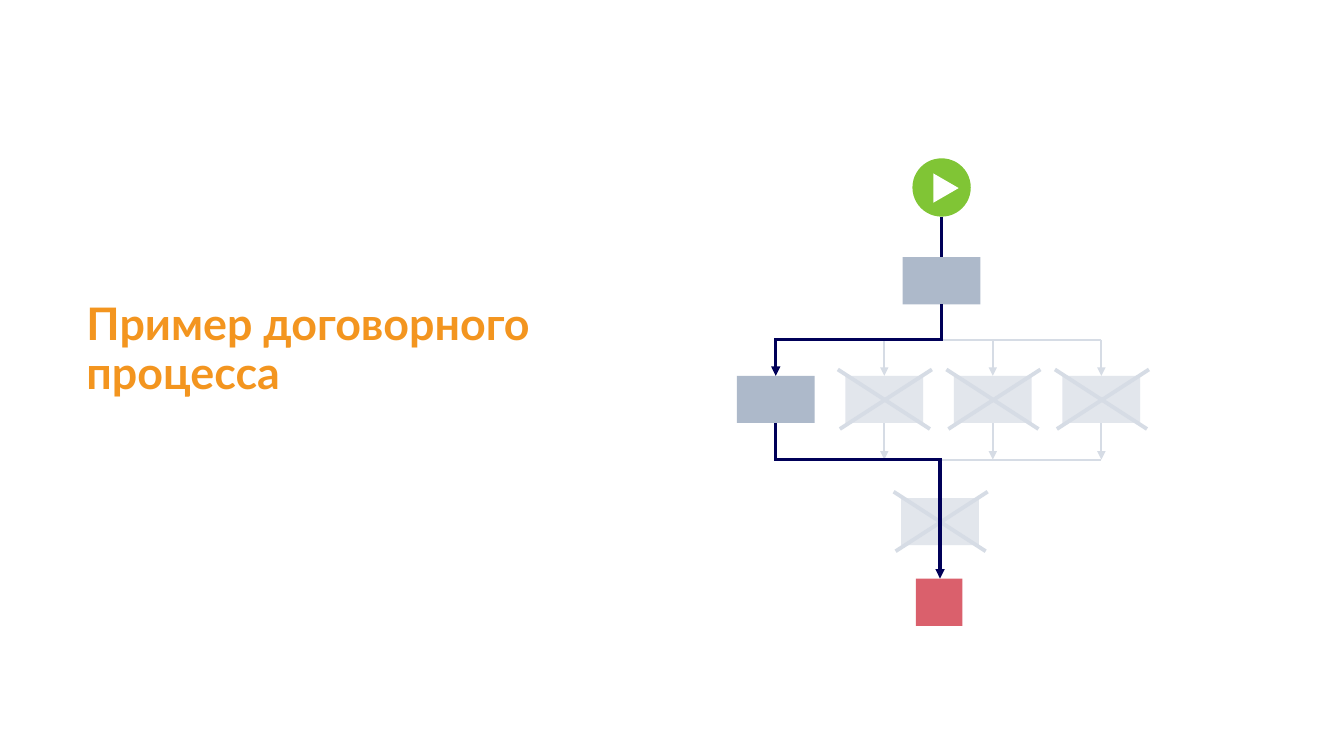
import pptx
import pptx.dml.color
import pptx.enum.shapes
import pptx.enum.text
import pptx.oxml
import pptx.oxml.ns
import pptx.util

Cm = pptx.util.Cm
Pt = pptx.util.Pt
SHAPE = pptx.enum.shapes.MSO_SHAPE

COLORS = {
    "title": "F3951F",
    "step": "ADB9CA",
    "faded": "D6DCE5",
    "route": "000058",
    "start": "80C535",
    "play": "FFFFFF",
    "stop": "DA606C",
}
STEP_W, STEP_H = 1.96, 1.19
AXIS = 23.73
BRANCHES = [19.55 + 2.735 * i for i in range(4)]
START_TOP, START_SIZE = 3.99, 1.47
FIRST_TOP = 6.48
SPLIT_Y, JOIN_Y = 8.56, 11.58
BRANCH_TOP = 9.47
SKIPPED_X, SKIPPED_TOP = 23.69, 12.55
STOP_TOP = 14.58


def rgb(color):
    return pptx.dml.color.RGBColor.from_string(COLORS[color])


def apply(target, values):
    for name, value in values.items():
        setattr(target, name, value)


def add_xml(parent, tag, **attributes):
    element = pptx.oxml.parse_xml(f"<a:{tag} {pptx.oxml.ns.nsdecls('a')}/>")
    for name, value in attributes.items():
        element.set(name, value)
    parent.append(element)


class ProcessSlide:
    """Holds the current slide, its diagram group and the text style."""

    font_format = {"name": "Lato", "size": Pt(32), "bold": True}
    frame_format = {
        "word_wrap": True,
        "vertical_anchor": pptx.enum.text.MSO_ANCHOR.MIDDLE,
    }

    def __init__(self, presentation):
        self.slide = presentation.slides.add_slide(presentation.slide_layouts[6])
        self.diagram = None

    def title(self, wording, left, top, width, height):
        box = self.slide.shapes.add_textbox(Cm(left), Cm(top), Cm(width), Cm(height))
        frame = box.text_frame
        apply(frame, self.frame_format)
        paragraph = frame.paragraphs[0]
        paragraph.text = wording
        paragraph.line_spacing = 0.9
        for run in paragraph.runs:
            apply(run.font, self.font_format)
            run.font.color.rgb = rgb("title")

    def start_diagram(self):
        self.diagram = self.slide.shapes.add_group_shape().shapes

    def node(self, kind, center, top, width, height, color, alpha=None, rotation=0):
        shape = self.diagram.add_shape(
            kind, Cm(center - width / 2), Cm(top), Cm(width), Cm(height))
        shape.shadow.inherit = False
        shape.rotation = rotation
        shape.fill.solid()
        shape.fill.fore_color.rgb = rgb(color)
        shape.line.fill.background()
        if alpha:
            tint = shape.fill._xPr.find(".//" + pptx.oxml.ns.qn("a:srgbClr"))
            add_xml(tint, "alpha", val=str(alpha * 1000))

    def step(self, center, top):
        self.node(SHAPE.RECTANGLE, center, top, STEP_W, STEP_H, "step")

    def skipped_step(self, center, top):
        self.node(SHAPE.RECTANGLE, center, top, STEP_W, STEP_H, "faded", alpha=70)

    def line(self, x1, y1, x2, y2, color, width, arrow=False):
        connector = self.diagram.add_connector(
            pptx.enum.shapes.MSO_CONNECTOR.STRAIGHT, Cm(x1), Cm(y1), Cm(x2), Cm(y2))
        connector.line.color.rgb = rgb(color)
        connector.line.width = Pt(width)
        if arrow:
            add_xml(connector.line._get_or_add_ln(), "tailEnd", type="triangle")
        add_xml(connector._element.spPr, "effectLst")

    def faded_line(self, *ends, arrow=False):
        self.line(*ends, "faded", 1.5, arrow)

    def route(self, *ends, arrow=False):
        self.line(*ends, "route", 2.25, arrow)

    def cross(self, center, top):
        """Strikes out the step with two diagonals that overshoot its corners."""
        left, upper = center - STEP_W / 2 - 0.19, top - 0.16
        right, lower = left + 2.32, upper + 1.5
        self.line(left, upper, right, lower, "faded", 2.75)
        self.line(left + 0.05, lower, right + 0.05, upper, "faded", 2.75)


def main():
    presentation = pptx.Presentation()
    apply(presentation, {"slide_width": Cm(33.87), "slide_height": Cm(19.05)})
    page = ProcessSlide(presentation)
    page.title("Пример договорного\vпроцесса", 1.93, 6.58, 12.95, 4.5)
    page.start_diagram()

    chosen, *skipped = BRANCHES
    branch_bottom = BRANCH_TOP + STEP_H
    page.step(AXIS, FIRST_TOP)
    page.step(chosen, BRANCH_TOP)
    for y in (SPLIT_Y, JOIN_Y):
        page.faded_line(chosen, y, skipped[-1], y)
    for x in skipped:
        page.skipped_step(x, BRANCH_TOP)
        page.faded_line(x, SPLIT_Y, x, BRANCH_TOP, arrow=True)
        page.faded_line(x, branch_bottom, x, JOIN_Y, arrow=True)
        page.cross(x, BRANCH_TOP)
    page.skipped_step(SKIPPED_X, SKIPPED_TOP)
    page.cross(SKIPPED_X, SKIPPED_TOP)

    page.route(AXIS, START_TOP + START_SIZE, AXIS, FIRST_TOP)
    page.route(AXIS, FIRST_TOP + STEP_H, AXIS, SPLIT_Y + 0.04)
    page.route(chosen - 0.04, SPLIT_Y, AXIS, SPLIT_Y)
    page.route(chosen, SPLIT_Y, chosen, BRANCH_TOP, arrow=True)
    page.route(chosen, branch_bottom, chosen, JOIN_Y + 0.04)
    page.route(chosen, JOIN_Y, AXIS, JOIN_Y)
    page.route(SKIPPED_X, JOIN_Y, SKIPPED_X, STOP_TOP, arrow=True)

    page.node(SHAPE.OVAL, AXIS, START_TOP, START_SIZE, START_SIZE, "start")
    page.node(SHAPE.ISOSCELES_TRIANGLE, 23.84, 4.42, 0.74, 0.64, "play", rotation=90)
    page.node(SHAPE.RECTANGLE, 23.67, STOP_TOP, 1.17, STEP_H, "stop")
    presentation.save("out.pptx")


if __name__ == "__main__":
    main()
